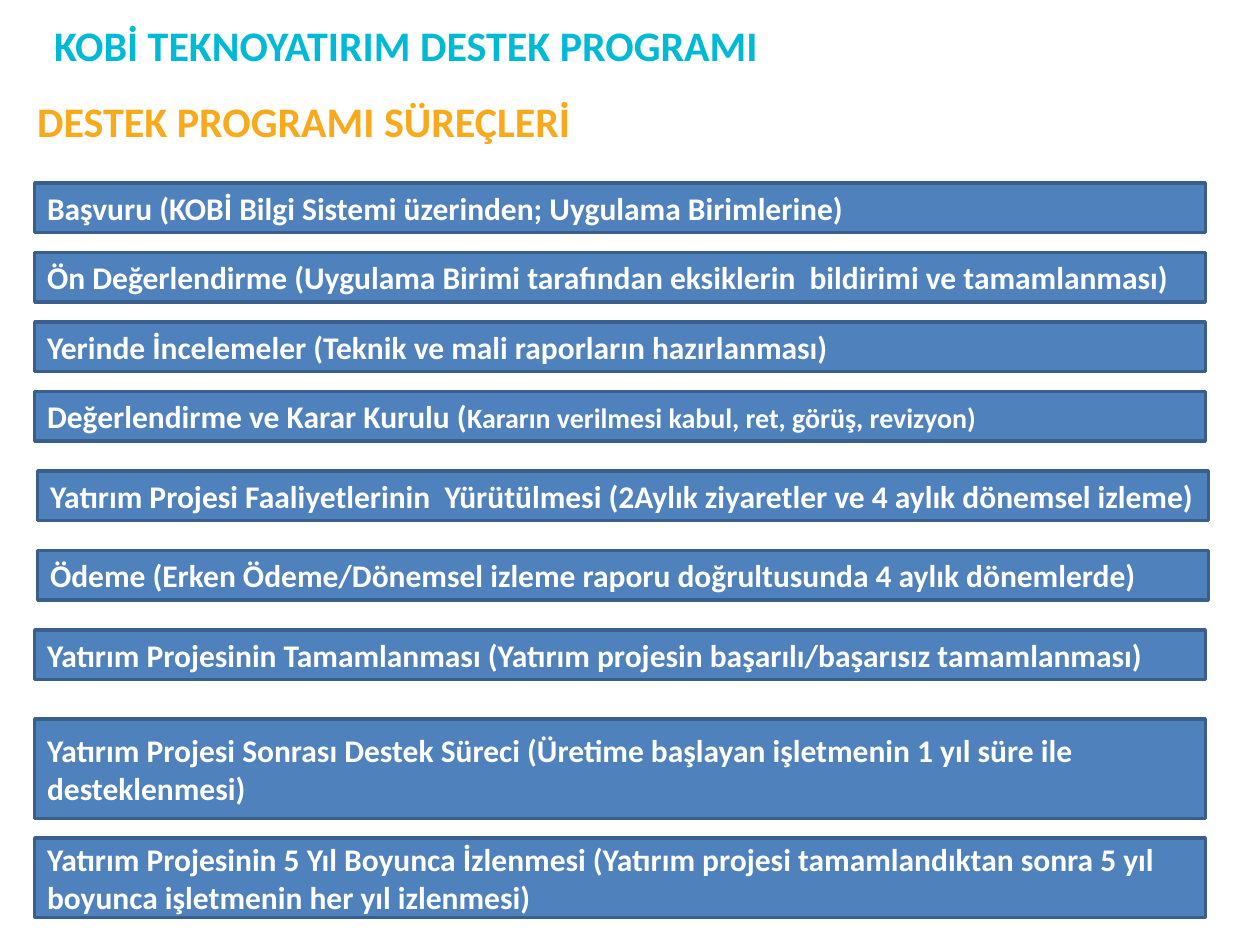
from pptx import Presentation
from pptx import util as u
from pptx.dml.color import RGBColor
from pptx.enum import shapes, text

# Content: headings as (text, colour, left, top, width, height) in cm
PROGRAMME = ("KOBİ TEKNOYATIRIM DESTEK PROGRAMI", "00BAD5", 0.84, -0.09, 22.86, 2)
PROCESS = ("DESTEK PROGRAMI SÜREÇLERİ", "F9A91C", 0, 1.93, 22.4, 1.02)
PROCESS_INDENT = 0.75

# Steps: (gap above, left, height) in cm, then runs of (text, size)
STEPS = [
    (0, 0.7, 1, [("Başvuru (KOBİ Bilgi Sistemi üzerinden; Uygulama Birimlerine)", 18)]),
    (0.4, 0.7, 1, [("Ön Değerlendirme (Uygulama Birimi tarafından eksiklerin  bildirimi ve tamamlanması)", 18)]),
    (0.4, 0.7, 1, [("Yerinde İncelemeler (Teknik ve mali raporların hazırlanması)", 18)]),
    (0.4, 0.7, 1, [("Değerlendirme ve Karar Kurulu (", 18),
                   ("Kararın verilmesi kabul, ret, görüş, revizyon)", 16)]),
    (0.6, 0.76, 1, [("Yatırım Projesi Faaliyetlerinin  Yürütülmesi (2Aylık ziyaretler ve 4 aylık dönemsel izleme)", 18)]),
    (0.6, 0.76, 1, [("Ödeme (Erken Ödeme/Dönemsel izleme raporu doğrultusunda 4 aylık dönemlerde)", 18)]),
    (0.6, 0.7, 1, [("Yatırım Projesinin Tamamlanması (Yatırım projesin başarılı/başarısız tamamlanması)", 18)]),
    (0.8, 0.7, 2, [("Yatırım Projesi Sonrası Destek Süreci (Üretime başlayan işletmenin 1 yıl süre ile desteklenmesi)", 18)]),
    (0.4, 0.7, 1.6, [("Yatırım Projesinin 5 Yıl Boyunca İzlenmesi (Yatırım projesi tamamlandıktan sonra 5 yıl "
                      "boyunca işletmenin her yıl izlenmesi)", 18)]),
]
FIRST_TOP, STEP_WIDTH = 3.69, 23.6


def colour(code):
    return RGBColor.from_string(code)


def write(frame, runs, code):
    frame.word_wrap = True
    paragraph = frame.paragraphs[0]
    paragraph.alignment = text.PP_ALIGN.LEFT
    for words, size in runs:
        run = paragraph.add_run()
        run.text = words
        run.font.name = "Calibri"
        run.font.size = u.Pt(size)
        run.font.bold = True
        run.font.color.rgb = colour(code)


def add_heading(slide, words, code, *place):
    frame = slide.shapes.add_textbox(*map(u.Cm, place)).text_frame
    write(frame, [(words, 24)], code)
    return frame


def add_step(slide, runs, *place):
    bar = slide.shapes.add_shape(shapes.MSO_SHAPE.RECTANGLE, *map(u.Cm, place))
    bar.shadow.inherit = False
    bar.fill.solid()
    bar.fill.fore_color.rgb = colour("4F81BD")
    bar.line.color.rgb = colour("3A5F8C")
    bar.line.width = u.Pt(2)
    bar.text_frame.vertical_anchor = text.MSO_ANCHOR.MIDDLE
    write(bar.text_frame, runs, "FFFFFF")


def main():
    deck = Presentation()
    deck.slide_width, deck.slide_height = u.Cm(25.4), u.Cm(18.98)
    slide = deck.slides.add_slide(deck.slide_layouts[6])

    # Headings
    process = add_heading(slide, *PROCESS)
    process.margin_left = u.Cm(PROCESS_INDENT)
    process.margin_right = process.margin_top = process.margin_bottom = 0
    programme = add_heading(slide, *PROGRAMME)
    programme.vertical_anchor = text.MSO_ANCHOR.MIDDLE

    # Process steps, stacked downwards
    top = FIRST_TOP
    for gap, left, height, runs in STEPS:
        top += gap
        add_step(slide, runs, left, top, STEP_WIDTH, height)
        top += height

    deck.save("out.pptx")


if __name__ == "__main__":
    main()
